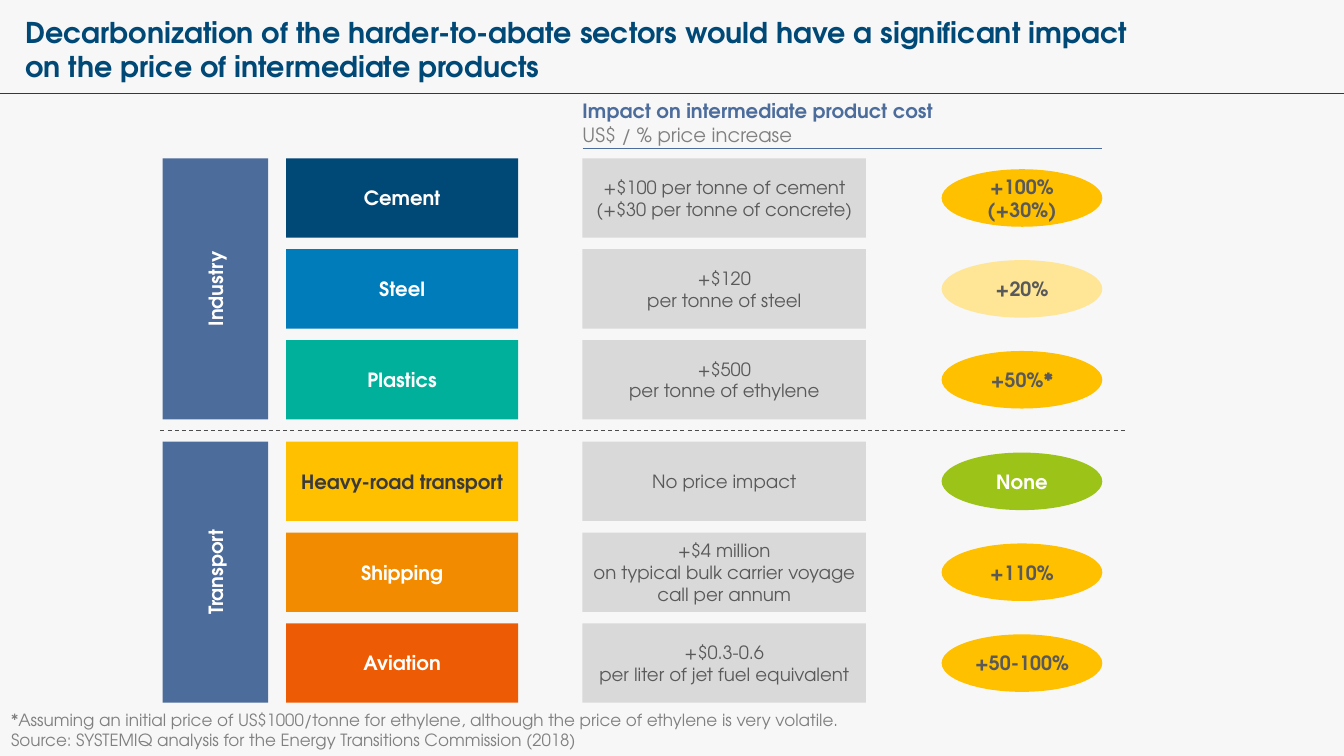
import lxml.etree
import pptx
import pptx.dml.color
import pptx.enum.dml
import pptx.enum.shapes
import pptx.enum.text
import pptx.oxml.ns
import pptx.util

Cm = pptx.util.Cm
ALIGN = pptx.enum.text.PP_ALIGN
ANCHOR = pptx.enum.text.MSO_ANCHOR
SHAPE = pptx.enum.shapes.MSO_SHAPE
FONT = "TeX Gyre Adventor"

COLORS = {
    "background": "F7F7F7", "navy": "004876", "slate": "4C6C9C",
    "blue": "007CBA", "teal": "00B09A", "amber": "FFC000",
    "pale": "FFE697", "orange": "F38B00", "red": "ED5C05",
    "green": "9CC317", "box": "D9D9D9", "white": "FFFFFF",
    "dark": "3A3A3A", "text": "595959", "muted": "808080", "dash": "4D4D4D",
}


def rgb(name):
    return pptx.dml.color.RGBColor.from_string(COLORS[name])


def write(shape, text, size=14, color="white", bold=False, align=ALIGN.CENTER,
          anchor=ANCHOR.MIDDLE, margins=(0.1, 0.1, 0.1, 0.1)):
    """Fill a shape with text, one paragraph per line; margins in cm (l, t, r, b)."""
    frame = shape.text_frame
    frame.text = text
    frame.word_wrap = True
    frame.auto_size = pptx.enum.text.MSO_AUTO_SIZE.NONE
    frame.vertical_anchor = anchor
    (frame.margin_left, frame.margin_top,
     frame.margin_right, frame.margin_bottom) = [Cm(margin) for margin in margins]
    for paragraph in frame.paragraphs:
        paragraph.alignment = align
        paragraph.font.name = FONT
        paragraph.font.size = pptx.util.Pt(size)
        paragraph.font.bold = bold
        paragraph.font.color.rgb = rgb(color)


presentation = pptx.Presentation()
presentation.slide_width, presentation.slide_height = Cm(33.87), Cm(19.05)
slide = presentation.slides.add_slide(presentation.slide_layouts[5])
slide.background.fill.solid()
slide.background.fill.fore_color.rgb = rgb("background")

# Title
title = slide.shapes.title
title.left, title.top, title.width, title.height = Cm(0.64), Cm(0.38), Cm(28.22), Cm(1.75)
write(title, "Decarbonization of the harder-to-abate sectors would have a significant "
      "impact on the price of intermediate products", size=20.4, color="navy", bold=True,
      align=ALIGN.LEFT, anchor=ANCHOR.TOP, margins=(0, 0, 0, 0))

# Rules: under the title, under the column heading, between the groups
for left, right, y, color, dashed in [
    (0, 33.87, 2.36, "navy", False),
    (14.68, 27.78, 3.75, "slate", False),
    (4.04, 28.4, 10.85, "dash", True),
]:
    rule = slide.shapes.add_connector(
        pptx.enum.shapes.MSO_CONNECTOR.STRAIGHT, Cm(left), Cm(y), Cm(right), Cm(y))
    rule.line.color.rgb = rgb(color)
    rule.line.width = pptx.util.Pt(0.75)
    if dashed:
        rule.line.dash_style = pptx.enum.dml.MSO_LINE.DASH
    lxml.etree.SubElement(rule.element.spPr, pptx.oxml.ns.qn("a:effectLst"))

# Column heading
heading = slide.shapes.add_textbox(Cm(14.68), Cm(2.49), Cm(13.1), Cm(1.25))
write(heading, "Impact on intermediate product cost\nUS$ / % price increase", color="slate",
      bold=True, align=ALIGN.LEFT, anchor=ANCHOR.BOTTOM, margins=(0, 0, 0, 0.05))
unit = heading.text_frame.paragraphs[1]
unit.font.bold = False
unit.font.color.rgb = rgb("muted")

# Sector groups: name, top, rows of
# (sector, fill, text colour, cost, share, share fill, share text colour)
groups = [
    ("Industry", 3.99, [
        ("Cement", "navy", "white", "+$100 per tonne of cement\n(+$30 per tonne of concrete)",
         "+100%\n(+30%)", "amber", "text"),
        ("Steel", "blue", "white", "+$120\nper tonne of steel", "+20%", "pale", "text"),
        ("Plastics", "teal", "white", "+$500\nper tonne of ethylene",
         "+50%*", "amber", "text"),
    ]),
    ("Transport", 11.13, [
        ("Heavy-road transport", "amber", "dark", "No price impact",
         "None", "green", "white"),
        ("Shipping", "orange", "white",
         "+$4 million\non typical bulk carrier voyage call per annum",
         "+110%", "amber", "text"),
        ("Aviation", "red", "white", "+$0.3-0.6\nper liter of jet fuel equivalent",
         "+50-100%", "amber", "text"),
    ]),
]
ROW_HEIGHT, ROW_PITCH, OVAL_HEIGHT = 2.0, 2.29, 1.45

for group, group_top, rows in groups:
    group_height = ROW_PITCH * (len(rows) - 1) + ROW_HEIGHT
    # kind, left, top, width, height, fill, text, size, colour, bold
    items = [(SHAPE.RECTANGLE, 4.1, group_top, 2.66, group_height,
              "slate", group, 14, "white", True)]
    for index, (sector, fill, color, cost, share, share_fill, share_color) in enumerate(rows):
        top = group_top + index * ROW_PITCH
        oval_top = top + (ROW_HEIGHT - OVAL_HEIGHT) / 2
        items += [
            (SHAPE.RECTANGLE, 7.21, top, 5.85, ROW_HEIGHT, fill, sector, 14, color, True),
            (SHAPE.RECTANGLE, 14.68, top, 7.14, ROW_HEIGHT, "box", cost, 13, "text", False),
            (SHAPE.OVAL, 23.73, oval_top, 4.05, OVAL_HEIGHT,
             share_fill, share, 14, share_color, True),
        ]
    for kind, left, top, width, height, fill, text, size, color, bold in items:
        shape = slide.shapes.add_shape(kind, Cm(left), Cm(top), Cm(width), Cm(height))
        shape.shadow.inherit = False
        shape.fill.solid()
        shape.fill.fore_color.rgb = rgb(fill)
        shape.line.fill.background()
        write(shape, text, size=size, color=color, bold=bold)
        if text == group:
            body = shape.element.txBody.find(pptx.oxml.ns.qn("a:bodyPr"))
            body.set("vert", "vert270")

# Footnote and source
footnote = slide.shapes.add_textbox(Cm(0.03), Cm(17.75), Cm(32.7), Cm(1.27))
write(footnote, "*Assuming an initial price of US$1000/tonne for ethylene, although the price "
      "of ethylene is very volatile.\n"
      "Source: SYSTEMIQ analysis for the Energy Transitions Commission (2018)",
      size=12, color="muted", align=ALIGN.LEFT, anchor=ANCHOR.TOP,
      margins=(0.25, 0.13, 0.25, 0.13))

presentation.save("out.pptx")
